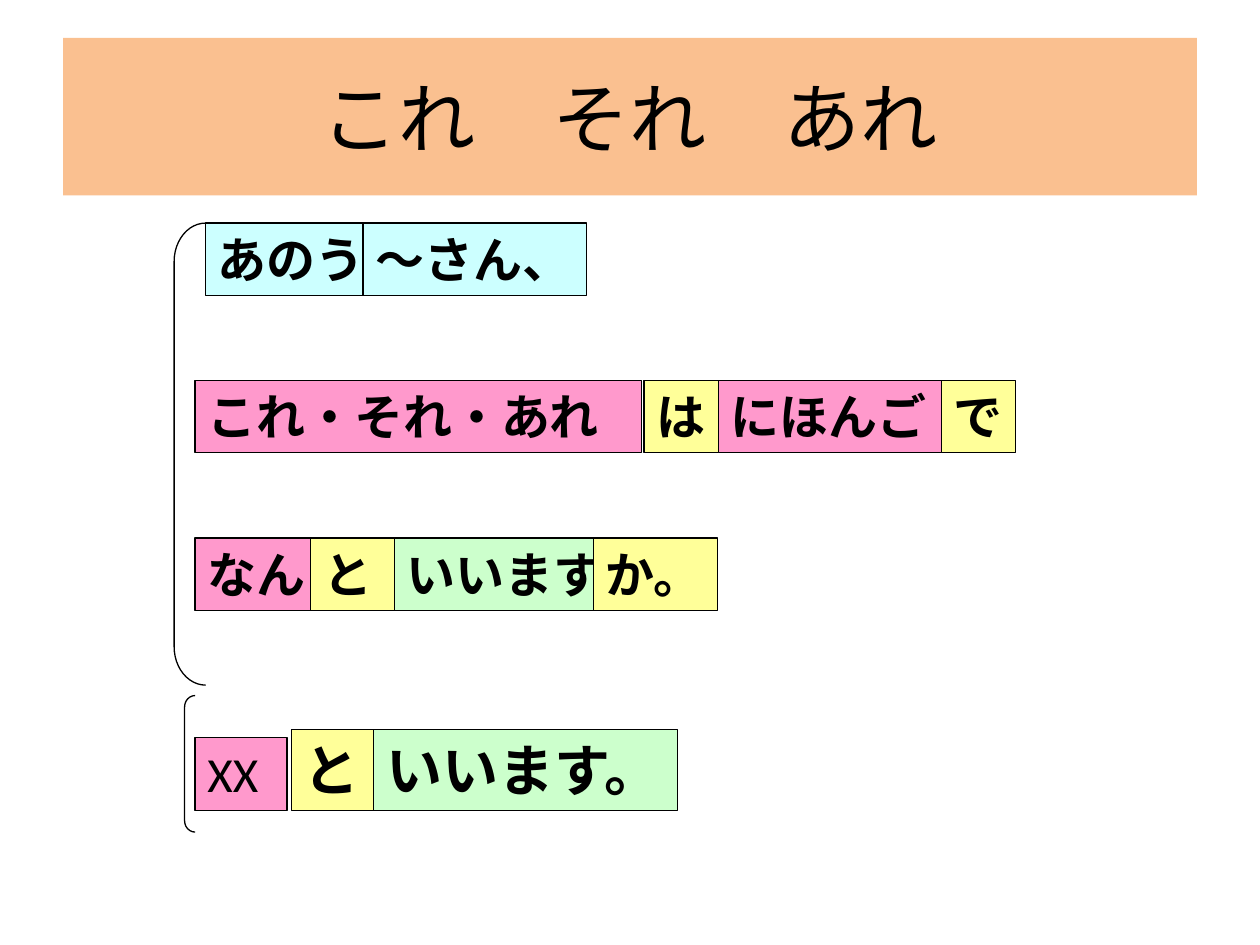
from dataclasses import dataclass

from pptx import Presentation
from pptx.dml.color import RGBColor
from pptx.enum.shapes import MSO_SHAPE
from pptx.enum.text import MSO_ANCHOR, MSO_AUTO_SIZE, PP_ALIGN
from pptx.util import Pt

LEFT_BRACKET = MSO_SHAPE.LEFT_BRACKET
MIDDLE = MSO_ANCHOR.MIDDLE
GROW = MSO_AUTO_SIZE.SHAPE_TO_FIT_TEXT
LEFT, CENTER = PP_ALIGN.LEFT, PP_ALIGN.CENTER
TITLE_ONLY = 5


@dataclass(frozen=True)
class Theme:
    font: str = "Calibri"
    title_size: int = 44
    word_size: int = 28
    answer_size: int = 32
    line_width: float = 0.75
    ink: str = "000000"
    title_fill: str = "FAC090"
    call: str = "CCFFFF"
    noun: str = "FF99CC"
    particle: str = "FFFF99"
    verb: str = "CCFFCC"


THEME = Theme()

# Each row: top, height, text size, then words as (left, width, text, fill, wrap).
ROWS = [
    (127.5, 41.2, THEME.word_size, [
        (117.5, 127.5, "あのう、", THEME.call, False),
        (207.5, 127.5, "～さん、", THEME.call, False),
    ]),
    (217.5, 41.2, THEME.word_size, [
        (111.5, 255, "これ・それ・あれ", THEME.noun, True),
        (368, 42.5, "は", THEME.particle, False),
        (410.5, 127.5, "にほんご", THEME.noun, False),
        (538, 42.5, "で", THEME.particle, False),
    ]),
    (307.5, 41.2, THEME.word_size, [
        (111.5, 71, "なん", THEME.noun, False),
        (177.5, 48, "と", THEME.particle, True),
        (225.5, 127.5, "いいます", THEME.verb, False),
        (339, 71, "か。", THEME.particle, False),
    ]),
    (417, 46, THEME.answer_size, [
        (166.5, 47, "と", THEME.particle, False),
        (213.5, 173.5, "いいます。", THEME.verb, False),
    ]),
]


def set_fill(shape, color):
    shape.fill.solid()
    shape.fill.fore_color.rgb = RGBColor.from_string(color)


def set_line(shape):
    shape.line.color.rgb = RGBColor.from_string(THEME.ink)
    shape.line.width = Pt(THEME.line_width)


def write_text(shape, text, *, size, bold=False, align=LEFT):
    paragraph = shape.text_frame.paragraphs[0]
    paragraph.alignment = align
    run = paragraph.add_run()
    run.text = text
    run.font.name = THEME.font
    run.font.size = Pt(size)
    run.font.bold = bold
    run.font.color.rgb = RGBColor.from_string(THEME.ink)


def add_title(slide, text):
    title = slide.shapes.title
    title.left, title.top, title.width, title.height = map(Pt, (36, 21.6, 648, 90))
    set_fill(title, THEME.title_fill)
    title.text_frame.vertical_anchor = MIDDLE
    write_text(title, text, size=THEME.title_size, align=CENTER)


def add_word(slide, left, top, width, height, text, *, fill, size, bold=True, wrap=False):
    word = slide.shapes.add_textbox(Pt(left), Pt(top), Pt(width), Pt(height))
    set_fill(word, fill)
    set_line(word)
    word.text_frame.word_wrap = wrap
    word.text_frame.auto_size = GROW
    write_text(word, text, size=size, bold=bold)


def add_bracket(slide, left, top, width, height, curve):
    bracket = slide.shapes.add_shape(LEFT_BRACKET, Pt(left), Pt(top), Pt(width), Pt(height))
    bracket.adjustments[0] = curve
    bracket.shadow.inherit = False
    bracket.fill.background()
    set_line(bracket)


def main():
    presentation = Presentation()
    presentation.slide_width, presentation.slide_height = Pt(720), Pt(540)
    slide = presentation.slides.add_slide(presentation.slide_layouts[TITLE_ONLY])
    add_title(slide, "これ　それ　あれ")
    for top, height, size, words in ROWS:
        for left, width, text, fill, wrap in words:
            add_word(slide, left, top, width, height, text, fill=fill, size=size, wrap=wrap)
    add_word(slide, 111.5, 421.5, 52.5, 41.5, "XX",
             fill=THEME.noun, size=THEME.word_size, bold=False)
    add_bracket(slide, 99.5, 127.5, 18, 264, 1.22)
    add_bracket(slide, 105.5, 397.5, 6, 78, 1.08)
    presentation.save("out.pptx")


if __name__ == "__main__":
    main()
